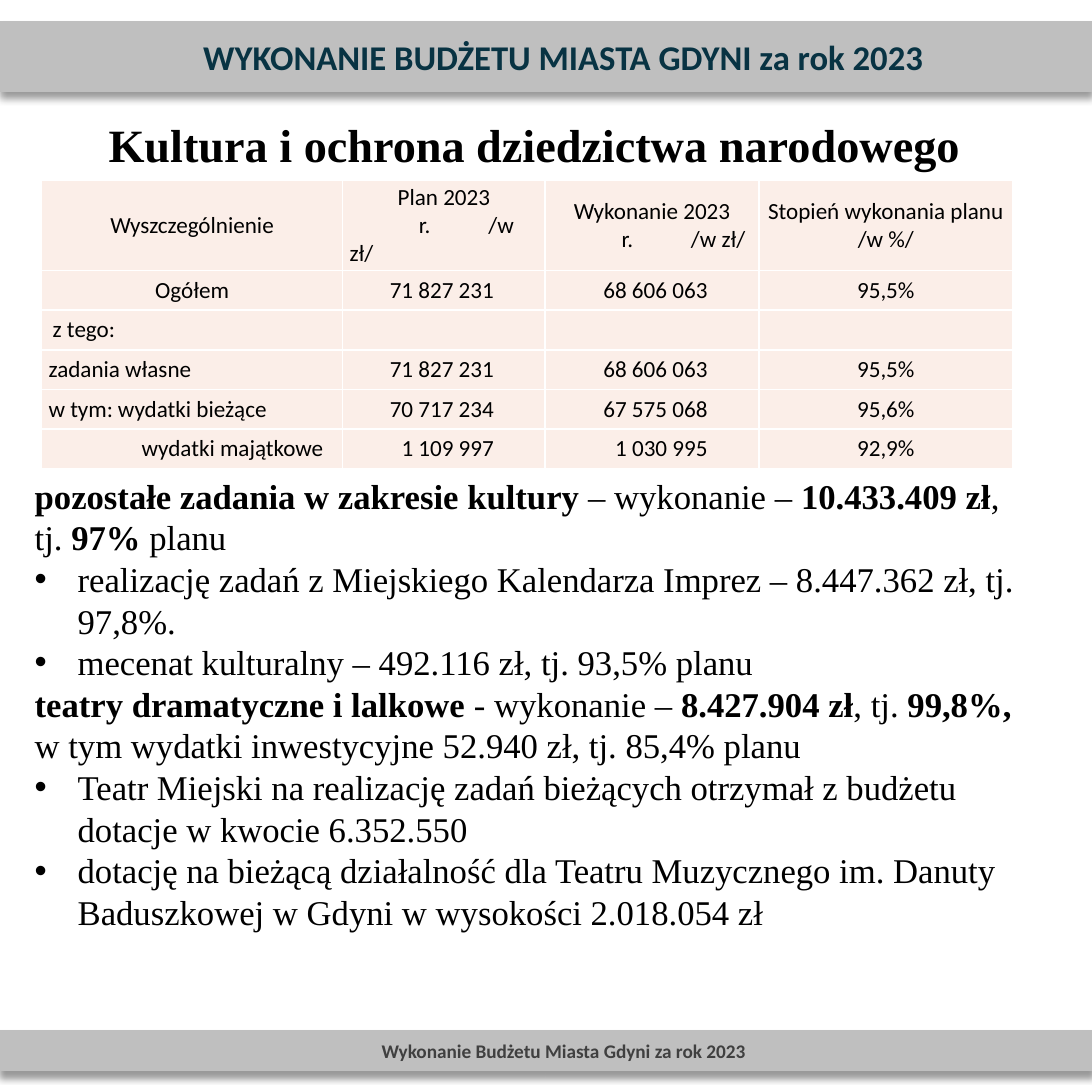
from lxml.etree import SubElement
from pptx import Presentation
from pptx.dml.color import RGBColor
from pptx.enum.shapes import MSO_SHAPE as SHAPE
from pptx.enum.text import MSO_ANCHOR as ANCHOR, MSO_AUTO_SIZE as AUTO, PP_ALIGN as AL
from pptx.oxml.ns import qn
from pptx.util import Inches, Pt

COLORS = {"band": "BFBFBF", "heading": "083343", "footer": "404040",
          "text": "000000", "cell": "FBEEE8", "border": "FFFFFF"}
SIDE, BAND_INSET = 7.87, 0.35
SERIF, SANS = "Times New Roman", "Calibri"


def rgb(name):
    return RGBColor.from_string(COLORS[name])


def add_text(p, text, size=18, font=SERIF, color="text", bold=False, align=None):
    r = p.add_run()
    r.text = text
    r.font.size, r.font.name, r.font.bold = Pt(size), font, bold
    r.font.color.rgb = rgb(color)
    if align is not None:
        p.alignment = align


def set_indent(p, left=0, first=0, bullet=None, tabs=()):
    pPr = p._p.get_or_add_pPr()
    pPr.set("marL", str(Inches(left)))
    pPr.set("indent", str(Inches(first)))
    if bullet:
        SubElement(pPr, qn("a:buFont"), typeface="Arial")
        SubElement(pPr, qn("a:buChar"), char=bullet)
    else:
        SubElement(pPr, qn("a:buNone"))
    if tabs:
        tab_list = SubElement(pPr, qn("a:tabLst"))
        for pos in tabs:
            SubElement(tab_list, qn("a:tab"), pos=str(Inches(pos)), algn="l")


def place(sp, box):
    sp.left, sp.top, sp.width, sp.height = (Inches(v) for v in box)
    tf = sp.text_frame
    tf.word_wrap, tf.auto_size, tf.vertical_anchor = True, AUTO.NONE, ANCHOR.TOP
    return tf


# Grey band with a soft shadow below it
def add_band(slide, box, text, size, color):
    sp = slide.shapes.add_shape(SHAPE.RECTANGLE, *(Inches(v) for v in box))
    sp.fill.solid()
    sp.fill.fore_color.rgb = rgb("band")
    sp.line.color.rgb = rgb("band")
    sp.line.width = Pt(1)
    sp.shadow.inherit = False
    effects = sp._element.spPr.find(qn("a:effectLst"))
    shadow = SubElement(effects, qn("a:outerShdw"), blurRad=str(Pt(4)),
                        dist=str(Pt(3)), dir="5400000", algn="t", rotWithShape="0")
    black = SubElement(shadow, qn("a:srgbClr"), val=COLORS["text"])
    SubElement(black, qn("a:alpha"), val="40000")
    tf = sp.text_frame
    tf.margin_left = Inches(BAND_INSET)
    tf.vertical_anchor = ANCHOR.MIDDLE
    add_text(tf.paragraphs[0], text, size, SANS, color, True, AL.CENTER)


def add_title(slide, box, text):
    tf = place(slide.shapes.title, box)
    add_text(tf.paragraphs[0], text, 24, bold=True, align=AL.CENTER)


# Body: each paragraph is (bullet?, [(text, bold), ...])
def add_body(slide, box, paragraphs):
    tf = place(slide.placeholders[1], box)
    for i, (bulleted, runs) in enumerate(paragraphs):
        p = tf.add_paragraph() if i else tf.paragraphs[0]
        p.space_before = Pt(0)
        if bulleted:
            set_indent(p, 0.31, -0.31, "•")
        else:
            set_indent(p)
        for text, bold in runs:
            add_text(p, text, bold=bold)


def format_cell(cell):
    tcPr = cell._tc.get_or_add_tcPr()
    for side in ("a:lnL", "a:lnR", "a:lnT", "a:lnB"):
        ln = SubElement(tcPr, qn(side), w=str(Pt(1)))
        SubElement(SubElement(ln, qn("a:solidFill")), qn("a:srgbClr"), val=COLORS["border"])
    cell.fill.solid()
    cell.fill.fore_color.rgb = rgb("cell")
    cell.margin_left = cell.margin_right = Inches(0.05)
    cell.margin_top = cell.margin_bottom = Inches(0.02)
    cell.vertical_anchor = ANCHOR.MIDDLE


# Budget table: label indents and tab stops are keyed by (row, column)
def add_budget_table(slide, box, columns, header_height, rows, indents, tabs):
    frame = slide.shapes.add_table(len(rows), len(columns), *(Inches(v) for v in box))
    table = frame.table
    for col, width in zip(table.columns, columns):
        col.width = Inches(width)
    row_height = (box[3] - header_height) / (len(rows) - 1)
    for i, row in enumerate(rows):
        table.rows[i].height = Inches(row_height if i else header_height)
        for j, text in enumerate(row):
            cell = table.cell(i, j)
            format_cell(cell)
            tf = cell.text_frame
            number = i > 0 and j in (1, 2)
            if number:
                cell.margin_right = Inches(0.37)
            if not text:
                SubElement(tf.paragraphs[0]._p, qn("a:endParaRPr"), sz="1200")
                continue
            for k, line in enumerate(text.split("\n")):
                p = tf.add_paragraph() if k else tf.paragraphs[0]
                if number:
                    p.space_before = Pt(2)
                    align = AL.RIGHT
                elif "\t" in line or (j == 0 and i > 1):
                    set_indent(p, indents.get((i, j), 0), tabs=tabs.get((i, j), ()))
                    align = AL.LEFT
                else:
                    align = AL.CENTER
                add_text(p, line, 12, SANS, align=align)


ROWS = [
    ("Wyszczególnienie", "Plan 2023\n\tr.\t/w zł/", "Wykonanie 2023\n\tr.\t/w zł/",
     "Stopień wykonania planu /w %/"),
    ("Ogółem", "71 827 231", "68 606 063", "95,5%"),
    ("z tego:", "", "", ""),
    ("zadania własne", "71 827 231", "68 606 063", "95,5%"),
    ("w tym:\twydatki bieżące", "70 717 234", "67 575 068", "95,6%"),
    ("wydatki majątkowe", "1 109 997", "1 030 995", "92,9%"),
]
BODY = [
    (False, [("pozostałe zadania w zakresie kultury ", True), ("– wykonanie – ", False),
             ("10.433.409 zł", True), (", tj. ", False), ("97%", True), (" planu", False)]),
    (True, [("realizację zadań z Miejskiego Kalendarza Imprez – 8.447.362 zł, tj. 97,8%.",
             False)]),
    (True, [("mecenat kulturalny – 492.116 zł, tj. 93,5% planu", False)]),
    (False, [("teatry dramatyczne i lalkowe", True), (" - wykonanie – ", False),
             ("8.427.904 zł", True), (", tj.", False), (" 99,8%, ", True),
             ("w tym wydatki inwestycyjne 52.940 zł, tj. 85,4% planu", False)]),
    (True, [("Teatr Miejski na realizację zadań bieżących otrzymał z budżetu "
             "dotacje w kwocie 6.352.550", False)]),
    (True, [("dotację na bieżącą działalność dla Teatru Muzycznego im. Danuty "
             "Baduszkowej w Gdyni w wysokości 2.018.054 zł", False)]),
]


def main():
    prs = Presentation()
    prs.slide_width = prs.slide_height = Inches(SIDE)
    slide = prs.slides.add_slide(prs.slide_layouts[1])
    add_band(slide, (0, 7.43, SIDE, 0.28),
             "Wykonanie Budżetu Miasta Gdyni za rok 2023", 10, "footer")
    add_band(slide, (0, 0.16, SIDE, 0.5),
             "WYKONANIE BUDŻETU MIASTA GDYNI za rok 2023", 18, "heading")
    add_title(slide, (0.19, 0.79, 7.32, 0.5), "Kultura i ochrona dziedzictwa narodowego")
    add_budget_table(slide, (0.3, 1.3, 7, 1.95), (2.17, 1.46, 1.54, 1.83), 0.52, ROWS,
                     indents={(2, 0): 0.03, (5, 0): 0.67},
                     tabs={(0, 1): (0.23, 0.73), (0, 2): (0.42, 0.62), (4, 0): (0.73,)})
    add_body(slide, (0.15, 3.37, 7.36, 3.74), BODY)
    prs.save("out.pptx")


if __name__ == "__main__":
    main()
